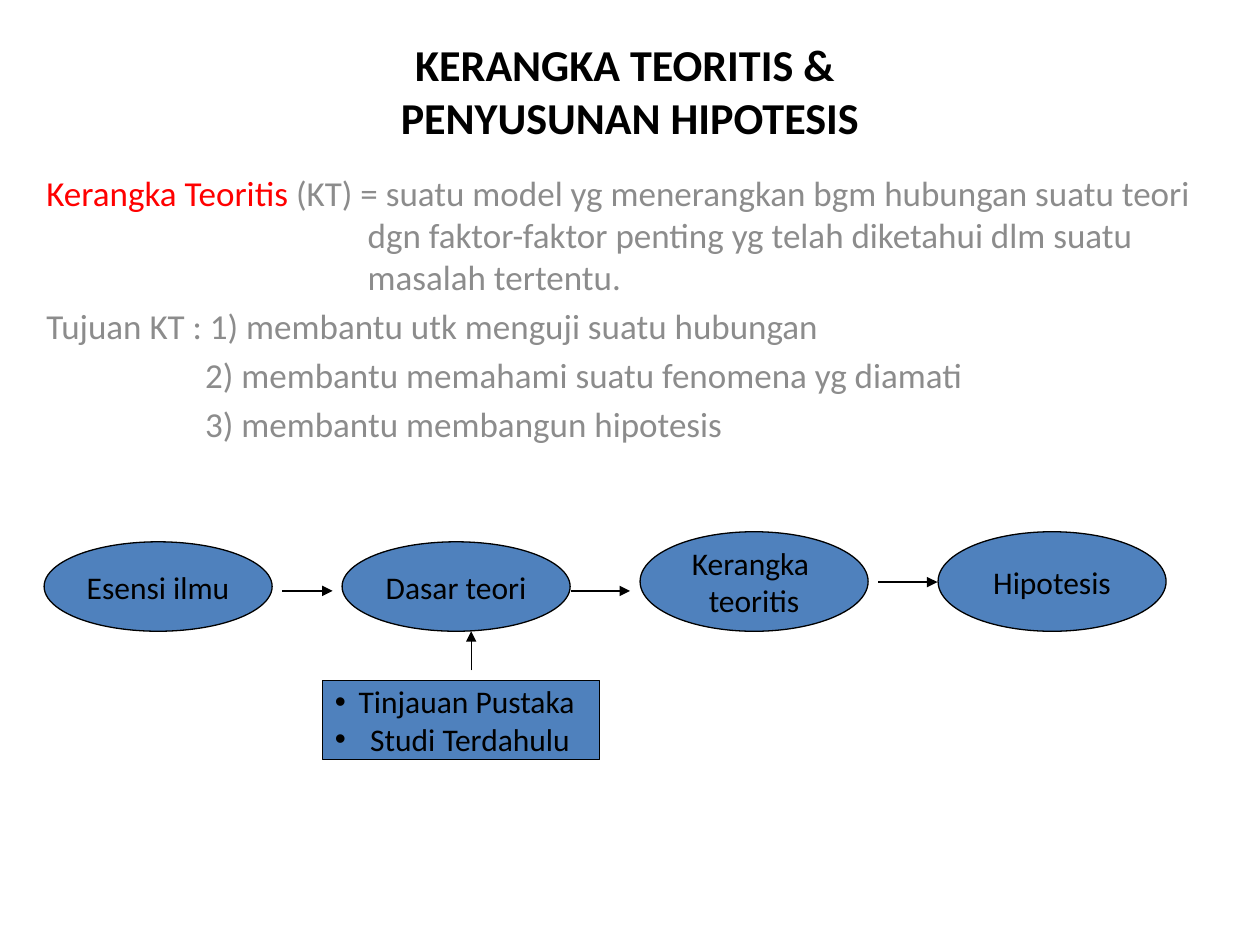
from dataclasses import dataclass

from lxml.etree import SubElement
from pptx import Presentation
from pptx.dml.color import RGBColor
from pptx.enum.shapes import MSO_CONNECTOR, MSO_SHAPE
from pptx.enum.text import MSO_ANCHOR, PP_ALIGN
from pptx.oxml.ns import qn
from pptx.slide import Slide
from pptx.text.text import TextFrame, _Paragraph
from pptx.util import Inches, Pt

COLORS = {"black": "000000", "red": "FF0000", "gray": "8C8C8C", "blue": "4F81BD"}
FONT = "Calibri"
STEP_LEFT, STEP_PITCH, STEP_WIDTH, STEP_BOTTOM = 0.35, 2.365, 1.81, 5.01


@dataclass
class Node:
    kind: MSO_SHAPE
    left: float
    top: float
    width: float
    height: float
    lines: tuple[str, ...]
    bulleted: bool = False


@dataclass
class Arrow:
    start: tuple[float, float]
    end: tuple[float, float]


@dataclass
class Statement:
    spans: tuple[tuple[str, str], ...]
    margin: float
    hanging: float


def step(index: int, height: float, *lines: str) -> Node:
    """Place an ellipse in the evenly spaced row of steps."""
    left = STEP_LEFT + index * STEP_PITCH
    return Node(MSO_SHAPE.OVAL, left, STEP_BOTTOM - height, STEP_WIDTH, height, lines)


NODES = [
    step(0, 0.71, "Esensi ilmu"),
    step(1, 0.71, "Dasar teori"),
    step(2, 0.79, "Kerangka ", "teoritis"),
    step(3, 0.79, "Hipotesis"),
    Node(MSO_SHAPE.RECTANGLE, 2.56, 5.4, 2.2, 0.63,
         ("Tinjauan Pustaka", " Studi Terdahulu"), True),
]
ARROWS = [
    Arrow((2.24, 4.69), (2.64, 4.69)),
    Arrow((4.53, 4.69), (5, 4.69)),
    Arrow((6.97, 4.62), (7.44, 4.62)),
    Arrow((3.74, 5.32), (3.74, STEP_BOTTOM)),
]
STATEMENTS = [
    Statement((("Kerangka Teoritis", "red"),
               (" (KT) = suatu model yg menerangkan bgm hubungan suatu teori dgn "
                "faktor-faktor penting yg telah diketahui dlm suatu masalah tertentu.",
                "gray")), 2.55, 2.55),
    Statement((("Tujuan KT : 1) membantu utk menguji suatu hubungan", "gray"),), 2.55, 2.55),
    Statement((("2) membantu memahami suatu fenomena yg diamati", "gray"),), 1.26, 0),
    Statement((("3) membantu membangun hipotesis", "gray"),), 1.26, 0),
]


def color(name: str) -> RGBColor:
    """Look up a named colour."""
    return RGBColor.from_string(COLORS[name])


def add_span(para: _Paragraph, text: str, size: float, name: str, bold: bool = False) -> None:
    """Append one formatted run."""
    span = para.add_run()
    span.text = text
    span.font.name = FONT
    span.font.size = Pt(size)
    span.font.bold = bold
    span.font.color.rgb = color(name)


def next_para(frame: TextFrame, index: int) -> _Paragraph:
    """Return the first paragraph or append another."""
    return frame.add_paragraph() if index else frame.paragraphs[0]


def draw_title(page: Slide) -> None:
    """Draw the two-line centred heading."""
    box = page.shapes.add_textbox(Inches(0.75), Inches(0.28), Inches(8.5), Inches(0.87))
    frame = box.text_frame
    frame.word_wrap = True
    frame.vertical_anchor = MSO_ANCHOR.MIDDLE
    para = frame.paragraphs[0]
    para.alignment = PP_ALIGN.CENTER
    add_span(para, "KERANGKA TEORITIS & ", 25.2, "black", True)
    para.add_line_break()
    add_span(para, "PENYUSUNAN HIPOTESIS", 25.2, "black", True)


def draw_statements(page: Slide, statements: list[Statement]) -> None:
    """Draw the definition and the list of aims."""
    box = page.shapes.add_textbox(Inches(0.27), Inches(1.31), Inches(9.53), Inches(5.91))
    frame = box.text_frame
    frame.word_wrap = True
    for index, statement in enumerate(statements):
        para = next_para(frame, index)
        para.space_before = Pt(4)
        properties = para._p.get_or_add_pPr()
        properties.set("marL", str(Inches(statement.margin)))
        properties.set("indent", str(-Inches(statement.hanging)))
        for text, name in statement.spans:
            add_span(para, text, 20, name)


def draw_node(page: Slide, node: Node) -> None:
    """Draw a labelled shape of the flow."""
    shape = page.shapes.add_shape(node.kind, Inches(node.left), Inches(node.top),
                                  Inches(node.width), Inches(node.height))
    shape.shadow.inherit = False
    shape.fill.solid()
    shape.fill.fore_color.rgb = color("blue")
    shape.line.color.rgb = color("black")
    shape.line.width = Pt(0.75)
    frame = shape.text_frame
    frame.word_wrap = False
    frame.vertical_anchor = MSO_ANCHOR.MIDDLE
    for index, line in enumerate(node.lines):
        para = next_para(frame, index)
        para.alignment = PP_ALIGN.CENTER
        if node.bulleted:
            properties = para._p.get_or_add_pPr()
            SubElement(properties, qn("a:buFont"), typeface="Arial")
            SubElement(properties, qn("a:buChar"), char="•")
        add_span(para, line, 18, "black")


def draw_arrow(page: Slide, arrow: Arrow) -> None:
    """Draw a straight line with a triangular head at its end."""
    points = [Inches(value) for value in (*arrow.start, *arrow.end)]
    connector = page.shapes.add_connector(MSO_CONNECTOR.STRAIGHT, *points)
    connector.line.color.rgb = color("black")
    connector.line.width = Pt(0.75)
    SubElement(connector.line._get_or_add_ln(), qn("a:tailEnd"), type="triangle")
    SubElement(connector._element.spPr, qn("a:effectLst"))


def main() -> None:
    """Build the slide and save the deck."""
    deck = Presentation()
    deck.slide_width, deck.slide_height = Inches(10), Inches(7.5)
    page = deck.slides.add_slide(deck.slide_layouts[6])
    draw_title(page)
    draw_statements(page, STATEMENTS)
    for node in NODES:
        draw_node(page, node)
    for arrow in ARROWS:
        draw_arrow(page, arrow)
    deck.save("out.pptx")


if __name__ == "__main__":
    main()
